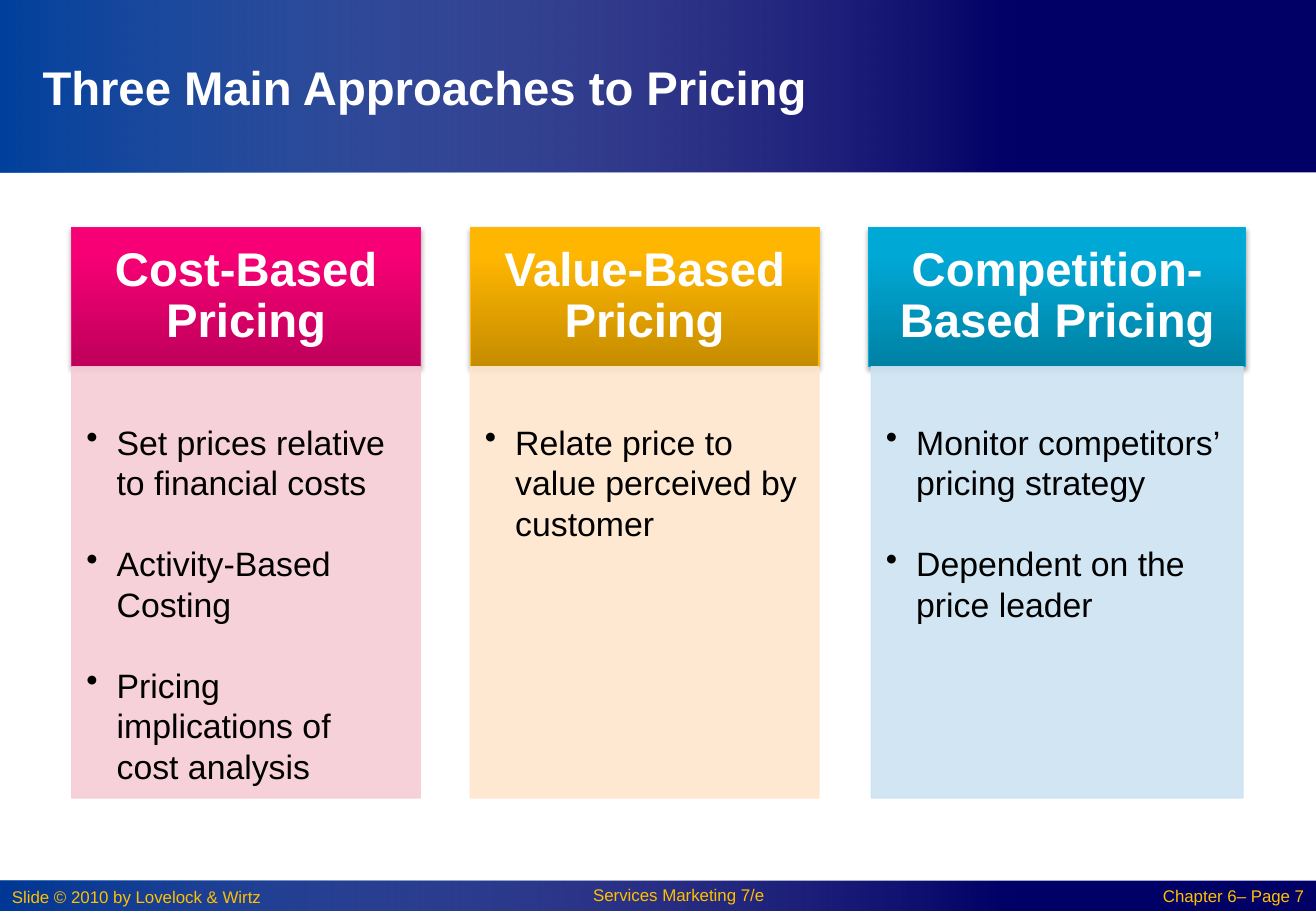
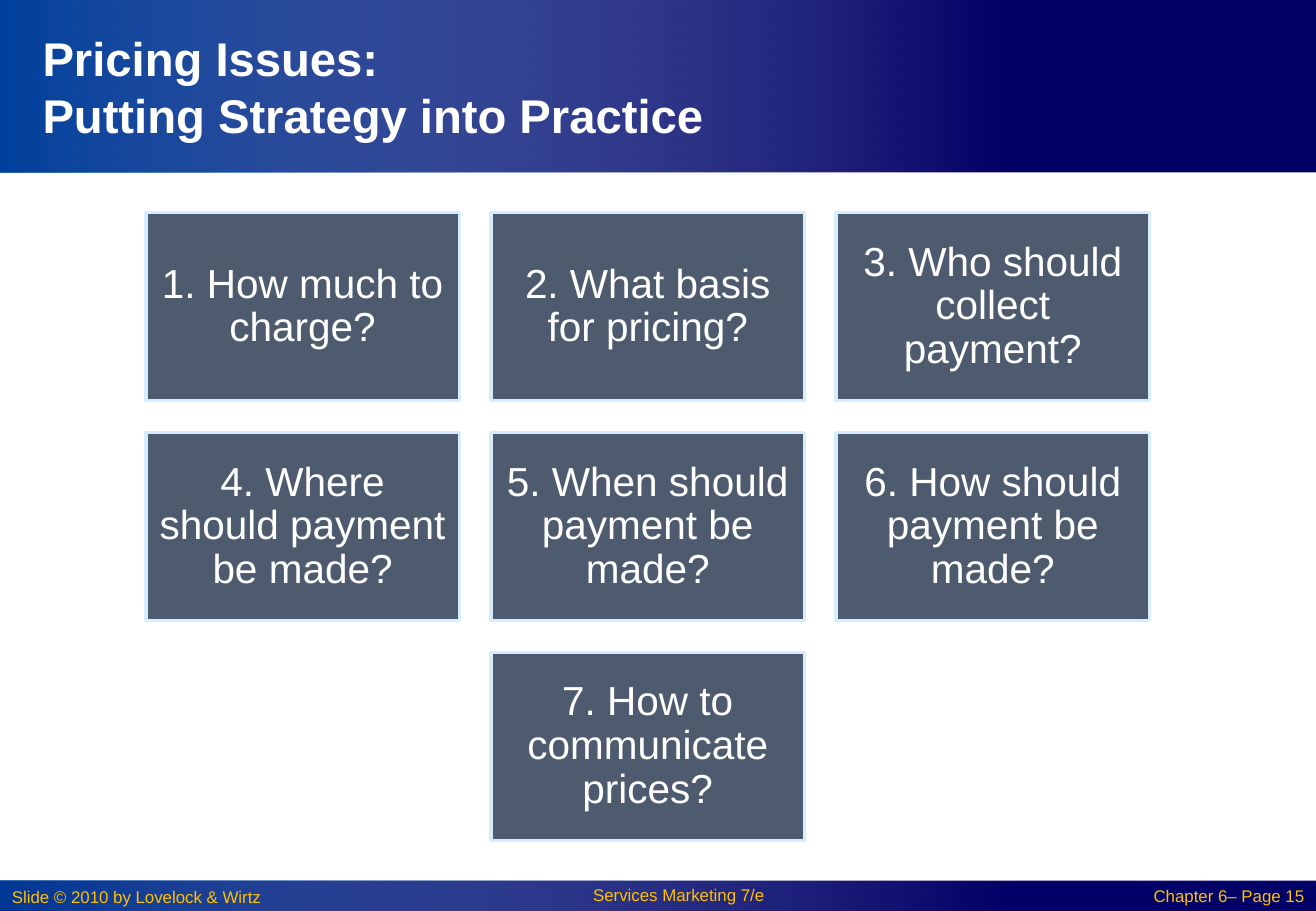
from dataclasses import dataclass
from typing import NamedTuple

from pptx import Presentation
from pptx.dml.color import RGBColor
from pptx.enum.shapes import MSO_SHAPE
from pptx.enum.text import MSO_ANCHOR, MSO_AUTO_SIZE, PP_ALIGN
from pptx.oxml import parse_xml
from pptx.oxml.ns import nsdecls, qn
from pptx.util import Inches, Pt

RECT = MSO_SHAPE.RECTANGLE
LEFT, CENTER, RIGHT = PP_ALIGN.LEFT, PP_ALIGN.CENTER, PP_ALIGN.RIGHT
TOP, MIDDLE = MSO_ANCHOR.TOP, MSO_ANCHOR.MIDDLE
NO_AUTOFIT = MSO_AUTO_SIZE.NONE

WIDTH, HEIGHT = 10.83, 7.5
FONT = "Arial"
COLORS = {
    "navy": "000066", "blue": "0152AB", "gold": "FFC000",
    "white": "FFFFFF", "black": "000000",
    "card": "4E5B6F", "card_line": "D6ECFF",
}
GLOW_WIDTH = WIDTH * 10 / 13
TITLE_BAND, FOOTER_BAND = 1.42, 0.25


class Box(NamedTuple):
    left: float
    top: float
    width: float
    height: float


class Stop(NamedTuple):
    pos: int
    color: str
    alpha: int = 100


class Band(NamedTuple):
    box: Box
    glow_alpha: int


class Footer(NamedTuple):
    box: Box
    text: str
    align: PP_ALIGN


@dataclass(frozen=True)
class Approach:
    name: str
    points: tuple[str, ...]
    shades: tuple[str, str, str]
    line: str
    tint: str
    width: float = 2.87
    body_inset: float = 0


BANDS = (
    Band(Box(0, HEIGHT - FOOTER_BAND, WIDTH, FOOTER_BAND), 69),
    Band(Box(0, 0, WIDTH, TITLE_BAND), 80),
)
FOOTERS = (
    Footer(Box(0, 7.25, 2.58, 0.28), "Slide © 2010 by Lovelock & Wirtz", LEFT),
    Footer(Box(4.25, 7.25, 2.67, 0.25), "Services Marketing 7/e", CENTER),
    Footer(Box(9.08, 7.26, 1.75, 0.25), "Chapter 6– Page {page}", RIGHT),
)
APPROACHES = (
    Approach("Cost-Based Pricing",
             ("Set prices relative to financial costs", "Activity-Based Costing",
              "Pricing implications of cost analysis"),
             ("BE005A", "F70075", "F80076"), "EA157A", "F7CCD7"),
    Approach("Value-Based Pricing",
             ("Relate price to value perceived by customer",),
             ("C58C00", "FFB601", "FFB602"), "FEB80A", "FFE6CC"),
    Approach("Competition-Based Pricing",
             ("Monitor competitors’ pricing strategy", "Dependent on the price leader"),
             ("0081A4", "00A8D5", "00A8D6"), "00ADDC", "CCE3F2", 3.1, 0.02),
)
ISSUES = (
    "1. How much to charge?", "2. What basis for pricing?",
    "3. Who should collect payment?", "4. Where should payment be made?",
    "5. When should payment be made?", "6. How should payment be made?",
    "7. How to communicate prices?",
)


def emu(box: Box) -> tuple:
    return tuple(Inches(v) for v in box)


def write(tf, *paragraphs: str, size: float, color: str, bold: bool = False,
          align: PP_ALIGN = LEFT, anchor: MSO_ANCHOR = TOP, spacing: float = 1,
          gap: float = 0, bullet: bool = False,
          insets: tuple = (0.1, 0.05, 0.1, 0.05)) -> None:
    """Fill a text frame; a newline inside a paragraph is a line break."""
    tf.word_wrap = True
    tf.auto_size = NO_AUTOFIT
    tf.vertical_anchor = anchor
    (tf.margin_left, tf.margin_top,
     tf.margin_right, tf.margin_bottom) = (Inches(v) for v in insets)
    for i, text in enumerate(paragraphs):
        p = tf.add_paragraph() if i else tf.paragraphs[0]
        p.alignment = align
        p.line_spacing = spacing
        p.space_before = Pt(gap if i else 0)
        if bullet:
            add_bullet(p)
        for j, line in enumerate(text.splitlines()):
            if j:
                p.add_line_break()
            r = p.add_run()
            r.text = line
            r.font.name, r.font.size, r.font.bold = FONT, Pt(size), bold
            r.font.color.rgb = RGBColor.from_string(color)


def add_bullet(p, indent: float = 0.25) -> None:
    pPr = p._p.get_or_add_pPr()
    pPr.set("marL", str(Inches(indent)))
    pPr.set("indent", str(-Inches(indent)))
    pPr.append(parse_xml(f'<a:buChar {nsdecls("a")} char="•"/>'))


def add_rect(slide, box: Box, fill: str | None = None, line: str | None = None,
             line_width: float = 0.75):
    sp = slide.shapes.add_shape(RECT, *emu(box))
    sp.shadow.inherit = False
    if fill:
        sp.fill.solid()
        sp.fill.fore_color.rgb = RGBColor.from_string(fill)
    else:
        sp.fill.background()
    if line:
        sp.line.color.rgb = RGBColor.from_string(line)
        sp.line.width = Pt(line_width)
    else:
        sp.line.fill.background()
    return sp


def set_gradient(sp, stops: list[Stop], angle: int) -> None:
    """Give an unfilled shape a linear gradient, angle clockwise in degrees."""
    gs = "".join(
        f'<a:gs pos="{s.pos * 1000}"><a:srgbClr val="{s.color}">'
        f'<a:alpha val="{s.alpha * 1000}"/></a:srgbClr></a:gs>' for s in stops)
    spPr = sp.element.spPr
    spPr.replace(spPr.find(qn("a:noFill")), parse_xml(
        f'<a:gradFill {nsdecls("a")} rotWithShape="1"><a:gsLst>{gs}</a:gsLst>'
        f'<a:lin ang="{angle * 60000}" scaled="0"/></a:gradFill>'))


def set_alpha(sp, percent: int) -> None:
    """Make both fill and line partly transparent."""
    for clr in sp.element.spPr.iter(qn("a:srgbClr")):
        clr.append(parse_xml(f'<a:alpha {nsdecls("a")} val="{percent * 1000}"/>'))


def add_shadow(sp) -> None:
    sp.element.spPr.find(qn("a:effectLst")).append(parse_xml(
        f'<a:outerShdw {nsdecls("a")} blurRad="{Pt(3.1)}" dist="{Pt(1.8)}" '
        f'dir="5400000" rotWithShape="0"><a:srgbClr val="{COLORS["black"]}">'
        '<a:alpha val="35000"/></a:srgbClr></a:outerShdw>'))


def add_slide(prs, title: str, page: int):
    """Add a slide with its bands, footers and title."""
    slide = prs.slides.add_slide(prs.slide_layouts[5])
    for band in BANDS:
        add_rect(slide, band.box, COLORS["navy"])
        glow = add_rect(slide, band.box._replace(width=GLOW_WIDTH))
        set_gradient(glow, [Stop(0, COLORS["blue"], band.glow_alpha),
                            Stop(100, COLORS["white"], 0)], 0)
    for footer in FOOTERS:
        tb = slide.shapes.add_textbox(*emu(footer.box))
        write(tb.text_frame, footer.text.format(page=page), size=10,
              color=COLORS["gold"], align=footer.align,
              spacing=1 if footer.align == LEFT else 0.9)
    sp = slide.shapes.title
    sp.left, sp.top, sp.width, sp.height = emu(Box(0.25, 0.25, 7, 0.92))
    write(sp.text_frame, title, size=28, color=COLORS["white"], bold=True,
          anchor=MIDDLE)
    sp.element.getparent().append(sp.element)  # in front of the bands
    return slide


def add_approaches(slide, left: float = 0.59, top: float = 1.87, gap: float = 0.41,
                   head_height: float = 1.15, body_height: float = 3.55) -> None:
    for a in APPROACHES:
        head = add_rect(slide, Box(left, top, a.width, head_height), line=a.line)
        set_gradient(head, [Stop(*s) for s in zip((0, 80, 100), a.shades)], 270)
        add_shadow(head)
        write(head.text_frame, a.name, size=28, color=COLORS["white"], bold=True,
              align=CENTER, anchor=MIDDLE, spacing=0.9,
              insets=(0.22, 0.12, 0.22, 0.12))
        body = add_rect(slide, Box(left + a.body_inset, top + head_height,
                                   a.width - 2 * a.body_inset, body_height),
                        a.tint, a.tint)
        set_alpha(body, 90)
        write(body.text_frame, *a.points, size=20, color=COLORS["black"],
              bullet=True, gap=24, insets=(0.12, 0.45, 0.16, 0.17))
        left += a.width + gap


def add_issues(slide, left: float = 1.2, top: float = 1.75, width: float = 2.58,
               height: float = 1.55, gap: float = 0.26, columns: int = 3) -> None:
    """Lay the issues out in rows, centring a row that is not full."""
    for i, issue in enumerate(ISSUES):
        row, column = divmod(i, columns)
        in_row = min(columns, len(ISSUES) - row * columns)
        column += (columns - in_row) / 2
        card = add_rect(slide, Box(left + column * (width + gap),
                                   top + row * (height + gap), width, height),
                        COLORS["card"], COLORS["card_line"], 2)
        write(card.text_frame, issue, size=24, color=COLORS["white"], align=CENTER,
              anchor=MIDDLE, spacing=0.9, insets=(0.1,) * 4)


def main() -> None:
    prs = Presentation()
    prs.slide_width, prs.slide_height = Inches(WIDTH), Inches(HEIGHT)
    add_approaches(add_slide(prs, "Three Main Approaches to Pricing", 7))
    add_issues(add_slide(prs, """Pricing Issues:
Putting Strategy into Practice""", 15))
    prs.save("out.pptx")


if __name__ == "__main__":
    main()
